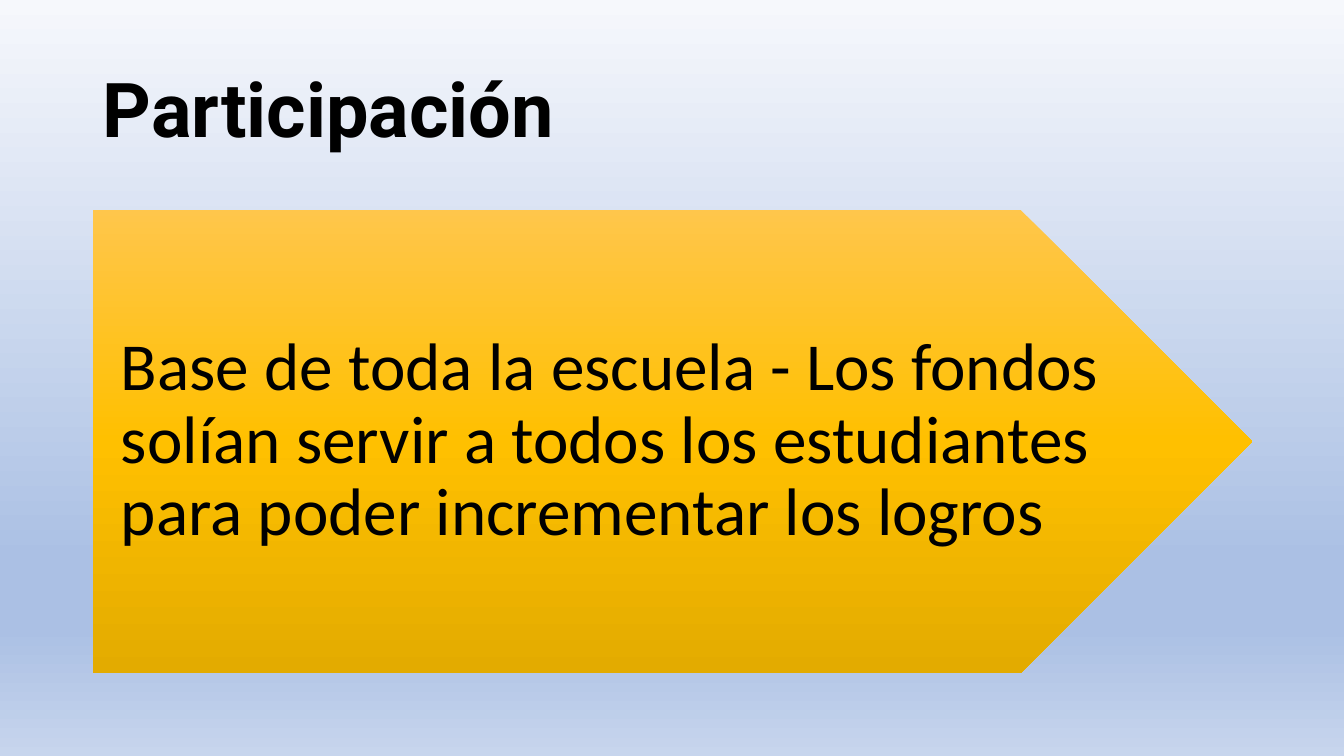
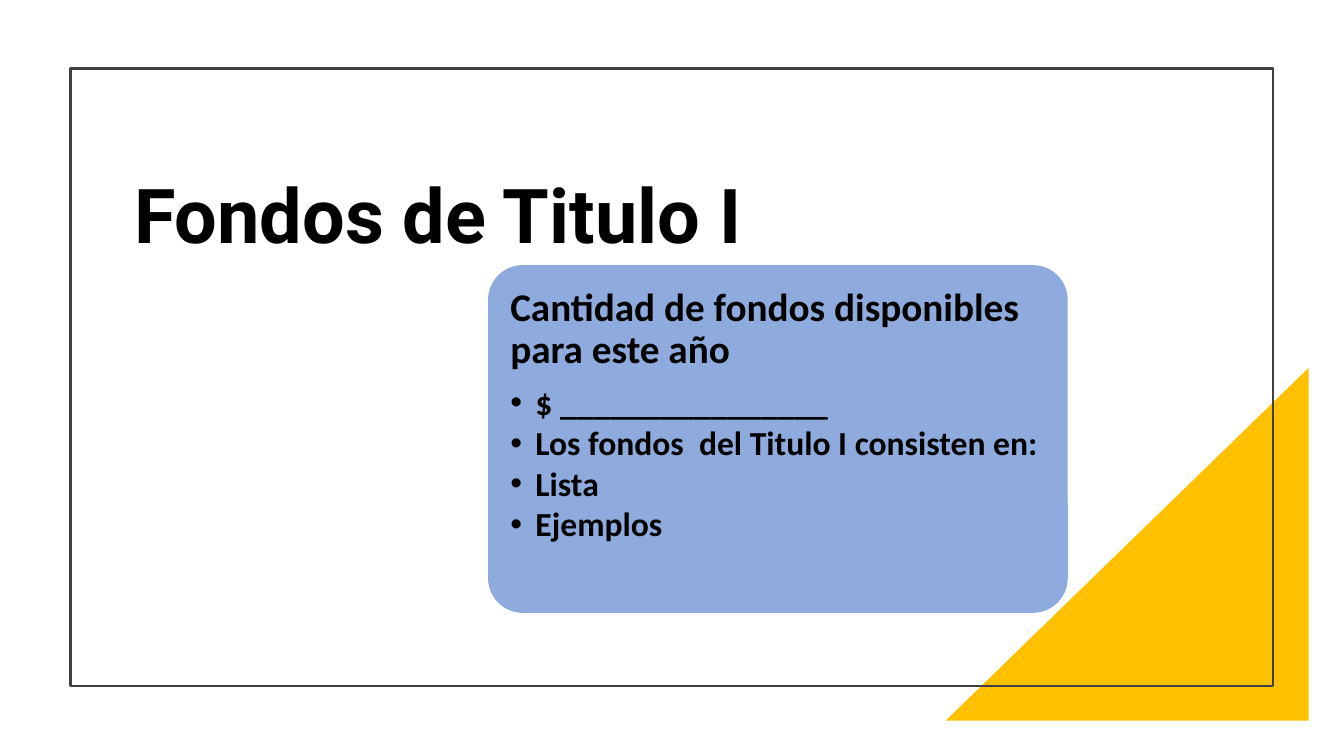
from pptx import Presentation
from pptx.dml.color import RGBColor
from pptx.enum.shapes import MSO_SHAPE
from pptx.enum.text import MSO_ANCHOR, MSO_AUTO_SIZE, PP_ALIGN
from pptx.oxml.ns import qn
from pptx.util import Inches, Pt
from lxml import etree

PENTAGON, ROUNDED = MSO_SHAPE.PENTAGON, MSO_SHAPE.ROUNDED_RECTANGLE
RECTANGLE, TRIANGLE = MSO_SHAPE.RECTANGLE, MSO_SHAPE.RIGHT_TRIANGLE
TOP, MIDDLE, LEFT = MSO_ANCHOR.TOP, MSO_ANCHOR.MIDDLE, PP_ALIGN.LEFT

BLACK = RGBColor(0x00, 0x00, 0x00)
WHITE = RGBColor(0xFF, 0xFF, 0xFF)
GRAY = RGBColor(0x40, 0x40, 0x40)
GOLD = RGBColor(0xFF, 0xC0, 0x00)
BLUE = RGBColor(0x8F, 0xAA, 0xDC)
SKY_STOPS = [
    (0, RGBColor(0xF6, 0xF8, 0xFC)),
    (74, RGBColor(0xAB, 0xC0, 0xE4)),
    (83, RGBColor(0xAB, 0xC0, 0xE4)),
    (100, RGBColor(0xC7, 0xD5, 0xED)),
]
GOLD_STOPS = [
    (0, RGBColor(0xFF, 0xC6, 0x4B)),
    (50, GOLD),
    (100, RGBColor(0xE3, 0xAB, 0x00)),
]
TITLE_FONT, BODY_FONT = "Roboto", "Calibri"


def set_gradient(fill, element, stops):
    """Fill from top to bottom through the given (percent, colour) stops."""
    fill.gradient()
    fill.gradient_angle = 270
    gs_list = element.find(".//" + qn("a:gsLst"))
    for gs in list(gs_list):
        gs_list.remove(gs)
    for percent, color in stops:
        gs = etree.SubElement(gs_list, qn("a:gs"), pos=str(percent * 1000))
        etree.SubElement(gs, qn("a:srgbClr"), val=str(color))


def add_text(tf, p, text, font, size, bold, space_after=0):
    """Write one left-aligned run into paragraph p of frame tf."""
    tf.word_wrap = True
    tf.auto_size = MSO_AUTO_SIZE.NONE
    p.alignment = LEFT
    p.line_spacing = 0.9
    p.space_before = Pt(0)
    p.space_after = Pt(space_after)
    r = p.add_run()
    r.text = text
    r.font.name = font
    r.font.size = Pt(size)
    r.font.bold = bold
    r.font.color.rgb = BLACK


prs = Presentation()
prs.slide_width = Inches(13.33)
prs.slide_height = Inches(7.5)

# Slides with their titles
slides = []
for title, box in [
    ("Participación", (0.92, 0.4, 11.5, 1.45)),
    ("Fondos de Titulo I", (1.23, 1.3, 10.92, 1.75)),
]:
    s = prs.slides.add_slide(prs.slide_layouts[5])
    sp = s.shapes.title
    sp.left, sp.top, sp.width, sp.height = [Inches(v) for v in box]
    tf = sp.text_frame
    tf.vertical_anchor = MIDDLE
    add_text(tf, tf.paragraphs[0], title, TITLE_FONT, 54, True)
    slides.append(s)

# Slide 1: gradient background and arrow
s = slides[0]
set_gradient(s.background.fill, s._element, SKY_STOPS)
arrow = s.shapes.add_shape(PENTAGON, Inches(0.92), Inches(2.08), Inches(11.5), Inches(4.6))
arrow.shadow.inherit = False
arrow.line.fill.background()
set_gradient(arrow.fill, arrow._element, GOLD_STOPS)
tf = arrow.text_frame
tf.vertical_anchor = MIDDLE
tf.margin_left, tf.margin_right = Inches(0.28), Inches(0.07)
tf.margin_top = tf.margin_bottom = Inches(0.14)
add_text(tf, tf.paragraphs[0],
         "Base de toda la escuela - Los fondos solían servir a todos los estudiantes "
         "para poder incrementar los logros", BODY_FONT, 48, False)

# Slide 2: corner triangle
s = slides[1]
s.background.fill.solid()
s.background.fill.fore_color.rgb = WHITE
triangle = s.shapes.add_shape(TRIANGLE, Inches(9.38), Inches(3.65), Inches(3.6), Inches(3.5))
triangle.shadow.inherit = False
triangle.fill.solid()
triangle.fill.fore_color.rgb = GOLD
triangle.line.fill.background()
triangle._element.spPr.find(qn("a:xfrm")).set("flipH", "1")

# Frame
frame = s.shapes.add_shape(RECTANGLE, Inches(0.7), Inches(0.68), Inches(11.93), Inches(6.13))
frame.shadow.inherit = False
frame.fill.background()
frame.line.color.rgb = GRAY
frame.line.width = Pt(1.5)

# Funds card
card = s.shapes.add_shape(ROUNDED, Inches(4.84), Inches(2.63), Inches(5.75), Inches(3.45))
card.shadow.inherit = False
card.adjustments[0] = 0.1
card.fill.solid()
card.fill.fore_color.rgb = BLUE
card.line.fill.background()
tf = card.text_frame
tf.vertical_anchor = TOP
tf.margin_left = tf.margin_right = tf.margin_top = tf.margin_bottom = Inches(0.12)
add_text(tf, tf.paragraphs[0], "Cantidad de fondos disponibles para este año",
         BODY_FONT, 28, True, 10)
for text in ["$ ________________", "Los fondos  del Titulo I consisten en:", "Lista", "Ejemplos"]:
    p = tf.add_paragraph()
    p.level = 1
    add_text(tf, p, text, BODY_FONT, 24, True, 3)
    pPr = p._p.get_or_add_pPr()
    pPr.set("marL", str(Inches(0.25)))
    pPr.set("indent", str(-Inches(0.25)))
    etree.SubElement(pPr, qn("a:buFont"), typeface="Arial")
    etree.SubElement(pPr, qn("a:buChar"), char="•")

prs.save("out.pptx")
